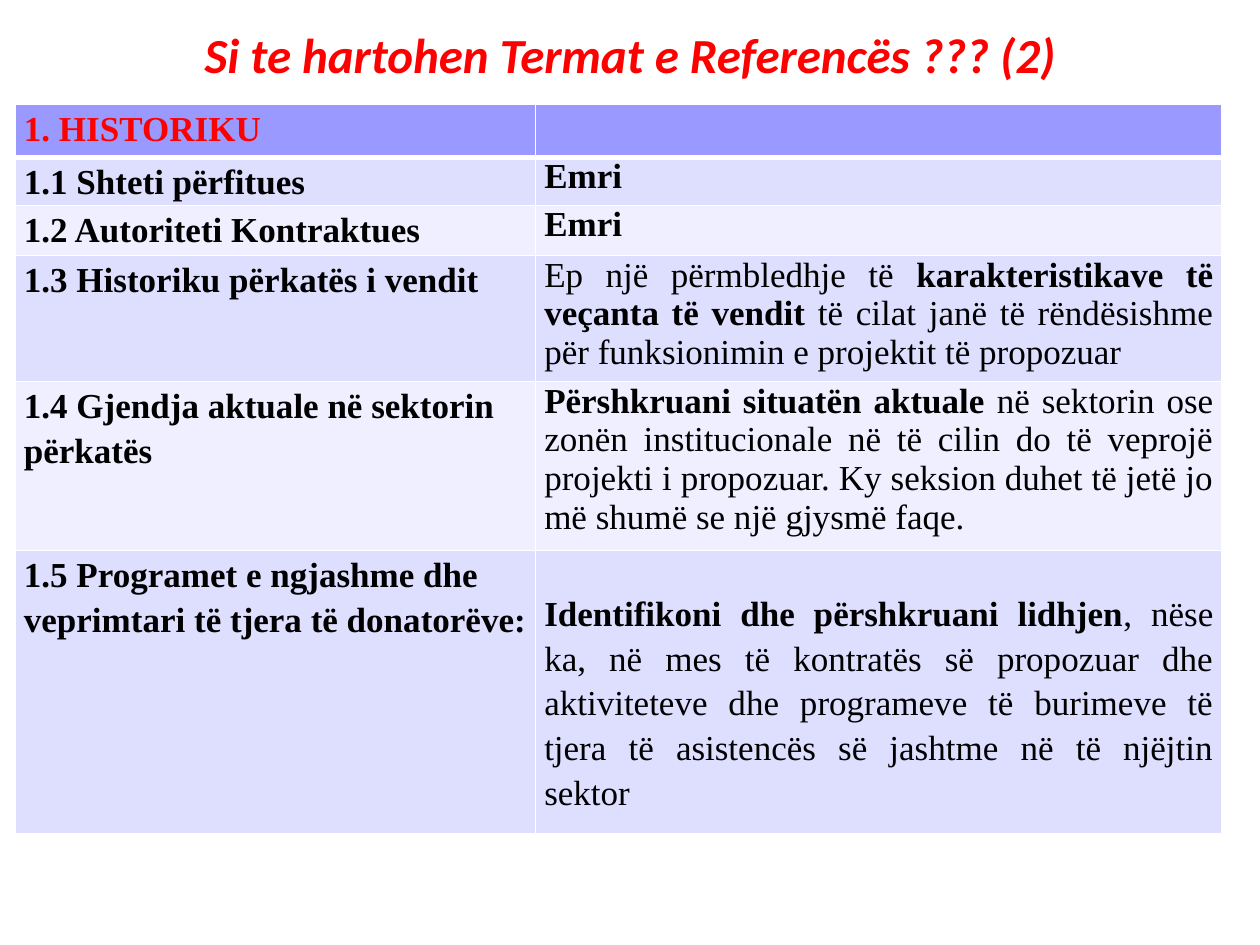
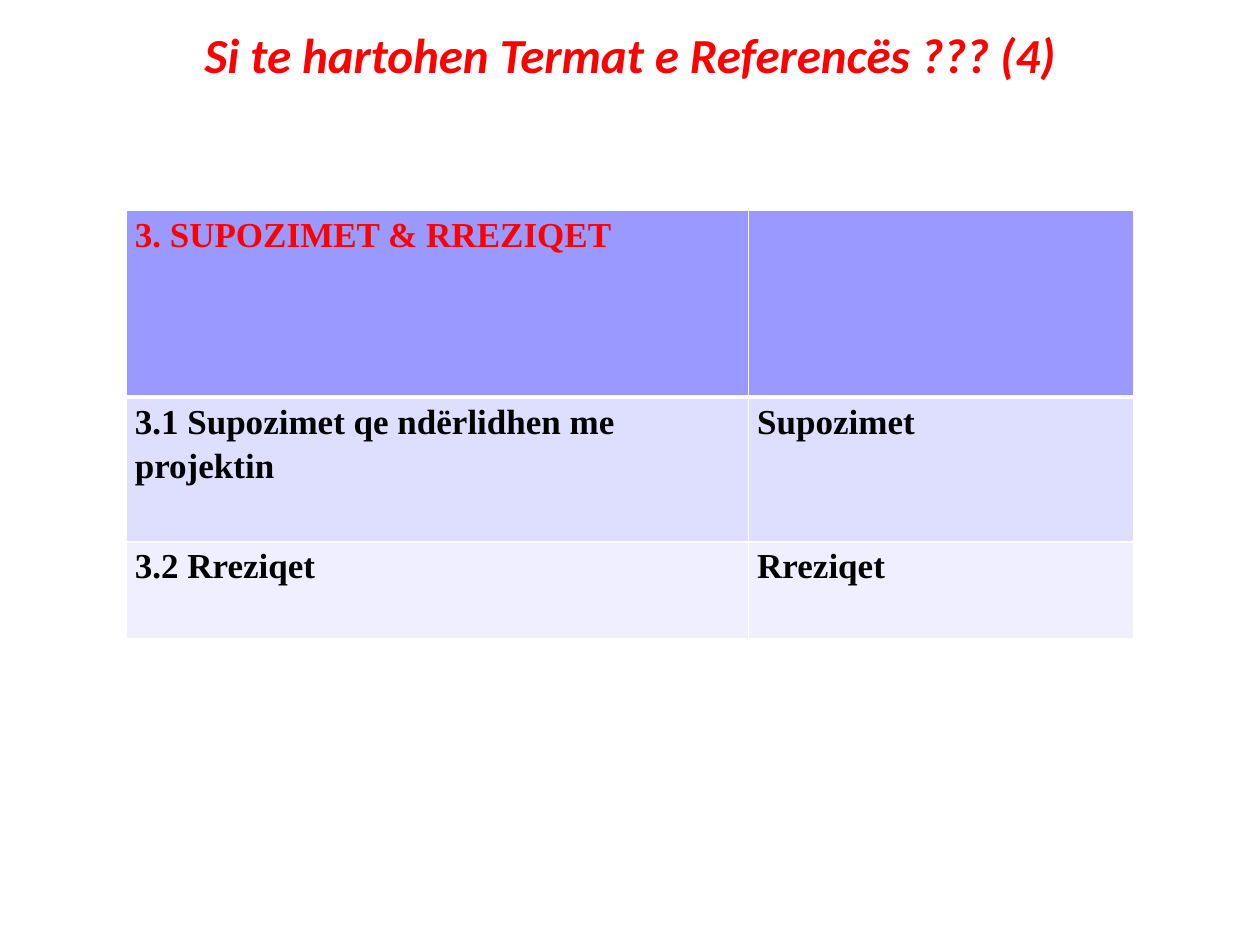
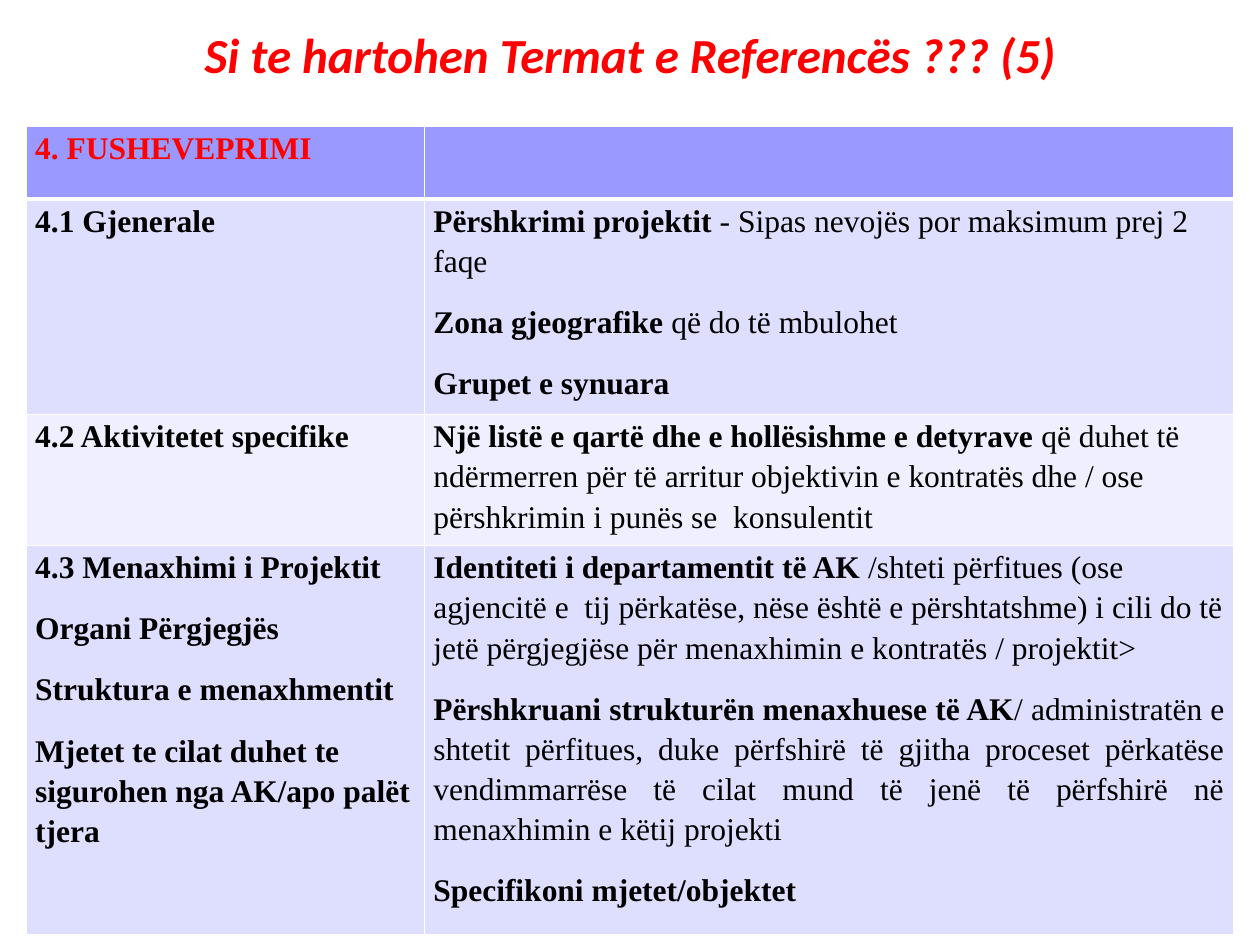
from dataclasses import dataclass
from typing import Any

from lxml import etree
from pptx import Presentation
from pptx.dml.color import RGBColor
from pptx.enum.text import MSO_ANCHOR, MSO_AUTO_SIZE, PP_ALIGN
from pptx.oxml.ns import qn
from pptx.util import Inches, Length, Pt

LEFT, MID, JUST = PP_ALIGN.LEFT, PP_ALIGN.CENTER, PP_ALIGN.JUSTIFY
TOP, CORE = MSO_ANCHOR.TOP, MSO_ANCHOR.MIDDLE
NO_FIT = MSO_AUTO_SIZE.NONE

# The slide is a grid of 100 columns by 75 square rows
WIDE, HIGH = Inches(10), Inches(7.5)
COLS = 100


def unit(count: float) -> Length:
    return Length(round(WIDE * count / COLS))


# Theme
@dataclass(frozen=True)
class Theme:
    red: str = "FF0000"
    ink: str = "000000"
    line: str = "FFFFFF"
    head: str = "9999FF"
    bands: tuple[str, str] = ("DEDEFF", "EFEFFF")
    title: str = "Calibri"
    body: str = "Times New Roman"
    big: int = 28
    loose: float = 1.15
    gap: int = 12
    pad: float = 0.7
    thin: int = 1
    thick: int = 3


LOOK = Theme()


# Content types; text between asterisks is bold
@dataclass(frozen=True)
class Para:
    text: str
    align: Any = LEFT
    lead: float = LOOK.loose


@dataclass(frozen=True)
class Row:
    high: float
    left: tuple[Para, ...]
    right: tuple[Para, ...] = ()
    drop: float = 0


@dataclass(frozen=True)
class Page:
    num: int
    spot: tuple[float, float]
    cols: tuple[float, float]
    size: int
    rows: tuple[Row, ...]


def bold(*lines: str) -> tuple[Para, ...]:
    return tuple(Para(f"*{line}*") for line in lines)


PAGES = (
    Page(2, (1.2, 8.3), (41.3, 54.5), 20, (
        Row(4.2, bold("1. HISTORIKU")),
        Row(3.8, bold("1.1 Shteti përfitues"), (Para("*Emri*", lead=1),)),
        Row(4.0, bold("1.2 Autoriteti Kontraktues"), (Para("*Emri*", lead=1),)),
        Row(10.0, bold("1.3 Historiku përkatës i vendit"), (Para(
            "Ep një përmbledhje të *karakteristikave të veçanta të vendit* të cilat "
            "janë të rëndësishme për funksionimin e projektit të propozuar", JUST, 1),)),
        Row(13.4, bold("1.4 Gjendja aktuale në sektorin përkatës"), (Para(
            "*Përshkruani situatën aktuale* në sektorin ose zonën institucionale në të "
            "cilin do të veprojë projekti i propozuar. Ky seksion duhet të jetë jo më "
            "shumë se një gjysmë faqe.", JUST, 1),)),
        Row(22.5, bold("1.5 Programet e ngjashme dhe veprimtari të tjera të donatorëve:"), (Para(
            "*Identifikoni dhe përshkruani lidhjen*, nëse ka, në mes të kontratës së "
            "propozuar dhe aktiviteteve dhe programeve të burimeve të tjera të "
            "asistencës së jashtme në të njëjtin sektor", JUST),), drop=3.1),
    )),
    Page(4, (10, 16.7), (49.4, 30.6), 20, (
        Row(14.8, bold("3. SUPOZIMET & RREZIQET")),
        Row(11.5, bold("3.1 Supozimet qe ndërlidhen me projektin"), bold("Supozimet")),
        Row(7.7, bold("3.2 Rreziqet"), bold("Rreziqet")),
    )),
    Page(5, (2.1, 10), (31.6, 64.2), 18, (
        Row(5.8, bold("4. FUSHEVEPRIMI")),
        Row(17.1, bold("4.1 Gjenerale"), (
            Para("*Përshkrimi projektit* - Sipas nevojës por maksimum prej 2 faqe"),
            Para("*Zona gjeografike* që do të mbulohet"),
            Para("*Grupet e synuara*"))),
        Row(10.4, bold("4.2 Aktivitetet specifike"), (Para(
            "*Një listë e qartë dhe e hollësishme e detyrave* që duhet të ndërmerren "
            "për të arritur objektivin e kontratës dhe / ose përshkrimin i punës se  "
            "konsulentit"),)),
        Row(30.9, bold("4.3 Menaxhimi i Projektit", "Organi Përgjegjës",
                       "Struktura e menaxhmentit",
                       "Mjetet te cilat duhet te sigurohen nga AK/apo palët tjera"), (
            Para("*Identiteti i departamentit të AK* /shteti përfitues (ose agjencitë e  "
                 "tij përkatëse, nëse është e përshtatshme) i cili do të jetë përgjegjëse "
                 "për menaxhimin e kontratës / projektit>"),
            Para("*Përshkruani strukturën menaxhuese të AK*/ administratën e shtetit "
                 "përfitues, duke përfshirë të gjitha proceset përkatëse vendimmarrëse të "
                 "cilat mund të jenë të përfshirë në menaxhimin e këtij projekti", JUST),
            Para("*Specifikoni mjetet/objektet*"))),
    )),
)


# Drawing
def style(item: Any, form: dict[str, Any]) -> None:
    for key, value in form.items():
        setattr(item, key, value)


def paint(font: Any, tint: str, **form: Any) -> None:
    style(font, form)
    font.color.rgb = RGBColor.from_string(tint)


def edge(cell: Any, top: int, base: int) -> None:
    props = cell._tc.get_or_add_tcPr()
    sides = {"L": LOOK.thin, "R": LOOK.thin, "T": top, "B": base}
    for side, width in sides.items():
        line = etree.SubElement(props, qn(f"a:ln{side}"), w=str(Pt(width)))
        fill = etree.SubElement(line, qn("a:solidFill"))
        etree.SubElement(fill, qn("a:srgbClr"), val=LOOK.line)


def write(frame: Any, paras: tuple[Para, ...], tint: str, size: int) -> None:
    for i, para in enumerate(paras):
        block = frame.add_paragraph() if i else frame.paragraphs[0]
        style(block, {"alignment": para.align, "line_spacing": para.lead,
                      "space_before": Pt(LOOK.gap if i else 0)})
        for j, part in enumerate(para.text.split("*")):
            if part:
                run = block.add_run()
                run.text = part
                paint(run.font, tint, name=LOOK.body, size=Pt(size), bold=j % 2 == 1)


def add_title(slide: Any, num: int) -> None:
    title = slide.shapes.title
    style(title, {"left": 0, "top": unit(1.4), "width": WIDE, "height": unit(5.7)})
    frame = title.text_frame
    style(frame, {"text": f"Si te hartohen Termat e Referencës ??? ({num})",
                  "auto_size": NO_FIT, "word_wrap": True, "vertical_anchor": CORE})
    block = frame.paragraphs[0]
    style(block, {"alignment": MID, "line_spacing": 1, "space_before": Pt(0)})
    paint(block.runs[0].font, LOOK.red, name=LOOK.title, size=Pt(LOOK.big),
          bold=True, italic=True)


def add_grid(slide: Any, page: Page) -> None:
    x, y = map(unit, page.spot)
    table = slide.shapes.add_table(
        len(page.rows), len(page.cols), x, y, unit(sum(page.cols)),
        unit(sum(row.high for row in page.rows))).table
    table.horz_banding = False
    for col, width in zip(table.columns, page.cols):
        col.width = unit(width)
    for i, row in enumerate(page.rows):
        table.rows[i].height = unit(row.high)
        fill = LOOK.bands[(i - 1) % 2] if i else LOOK.head
        tint = LOOK.ink if i else LOOK.red
        for j, paras in enumerate((row.left, row.right)):
            cell = table.cell(i, j)
            style(cell, {"margin_left": unit(LOOK.pad), "margin_right": unit(LOOK.pad),
                         "margin_top": unit(row.drop * j), "margin_bottom": 0,
                         "vertical_anchor": TOP})
            edge(cell, LOOK.thick if i == 1 else LOOK.thin,
                 LOOK.thin if i else LOOK.thick)
            cell.fill.solid()
            cell.fill.fore_color.rgb = RGBColor.from_string(fill)
            write(cell.text_frame, paras, tint, page.size)


def main() -> None:
    deck = Presentation()
    style(deck, {"slide_width": WIDE, "slide_height": HIGH})
    plain = deck.slide_layouts.get_by_name("Title Only")
    for page in PAGES:
        slide = deck.slides.add_slide(plain)
        add_title(slide, page.num)
        add_grid(slide, page)
    deck.save("out.pptx")


if __name__ == "__main__":
    main()
